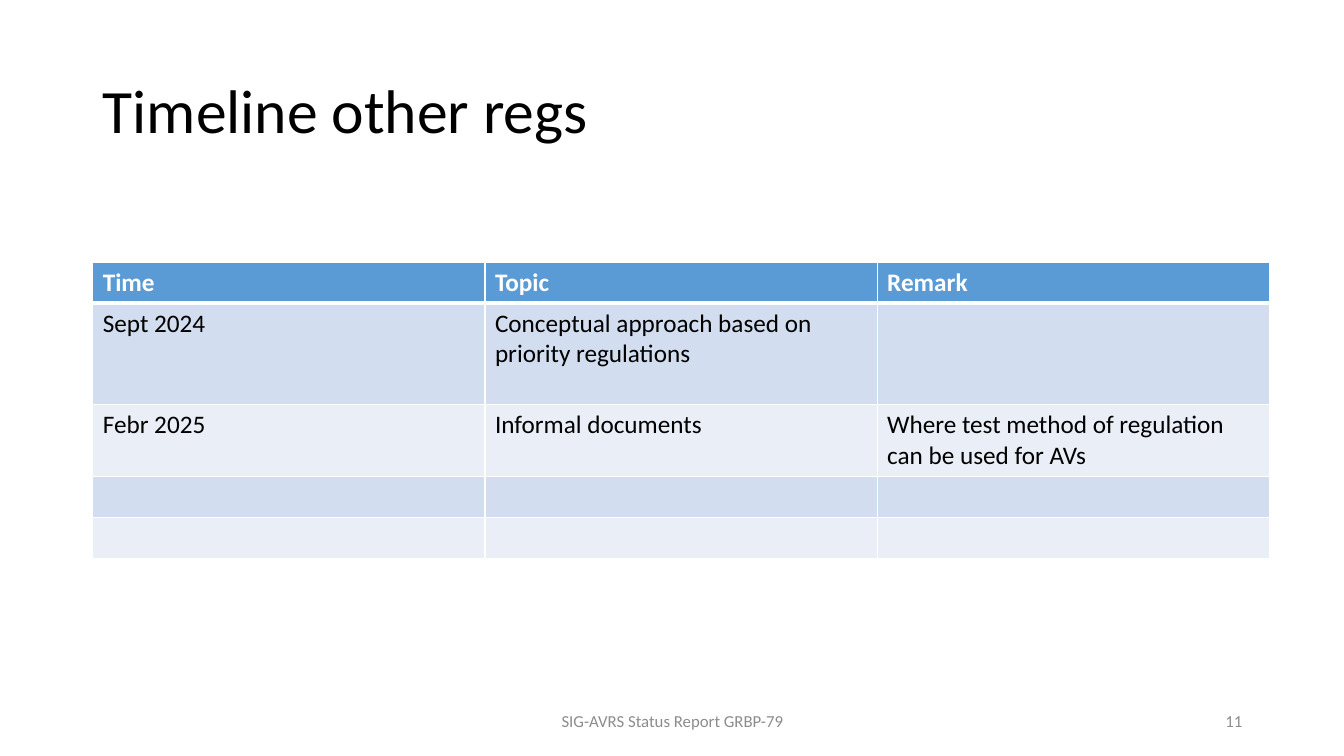
import pptx
import pptx.util
import pptx.oxml
import pptx.oxml.ns
import pptx.dml.color
import pptx.enum.text
from dataclasses import dataclass


@dataclass(frozen=True)
class Theme:
    font: str = "Calibri"
    title_size: int = 44
    table_size: int = 18
    footer_size: int = 12
    ink: str = "000000"
    paper: str = "FFFFFF"
    footer: str = "8C8C8C"
    header: str = "5B9BD5"
    bands: tuple = ("D2DEEF", "EAEFF7")


theme = Theme()
inches = pptx.util.Inches
align = pptx.enum.text.PP_ALIGN
middle = pptx.enum.text.MSO_ANCHOR.MIDDLE
rgb = pptx.dml.color.RGBColor.from_string

MARGIN = 0.92
COLUMN_WIDTH = 3.89
ROW_HEIGHTS = (0.4, 1.01, 0.71, 0.4, 0.4)
timeline = (
    ("Time", "Topic", "Remark"),
    ("Sept 2024", "Conceptual approach based on priority regulations", ""),
    ("Febr 2025", "Informal documents",
     "Where test method of regulation can be used for AVs"),
    ("", "", ""),
    ("", "", ""),
)


def write(para, text, size, color, bold=False):
    para.font.size = pptx.util.Pt(size)
    if text:
        span = para.add_run()
        span.text = text
        span.font.name = theme.font
        span.font.size = pptx.util.Pt(size)
        span.font.bold = bold
        span.font.color.rgb = rgb(color)


def draw_borders(cell, bottom_width):
    """Give the cell 1 pt side and top borders and its own bottom border."""
    properties = cell._tc.get_or_add_tcPr()
    widths = {"L": 1, "R": 1, "T": 1, "B": bottom_width}
    for index, (side, width) in enumerate(widths.items()):
        properties.insert(index, pptx.oxml.parse_xml(
            f'<a:ln{side} {pptx.oxml.ns.nsdecls("a")} w="{pptx.util.Pt(width)}">'
            f'<a:solidFill><a:srgbClr val="{theme.paper}"/></a:solidFill></a:ln{side}>'))


deck = pptx.Presentation()
deck.slide_width, deck.slide_height = inches(13.33), inches(7.5)
page = deck.slides.add_slide(deck.slide_layouts.get_by_name("Title Only"))

# Title
title = page.shapes.title
title.left, title.top = inches(MARGIN), inches(0.4)
title.width, title.height = inches(11.5), inches(1.45)
title.text_frame.vertical_anchor = middle
para = title.text_frame.paragraphs[0]
para.alignment = align.LEFT
para.line_spacing = 0.9
write(para, "Timeline other regs", theme.title_size, theme.ink)

# Timeline table
column_count = len(timeline[0])
table = page.shapes.add_table(
    len(timeline), column_count, inches(MARGIN), inches(2.6),
    inches(COLUMN_WIDTH * column_count), inches(sum(ROW_HEIGHTS))).table
for column in table.columns:
    column.width = inches(COLUMN_WIDTH)
for row_index, texts in enumerate(timeline):
    table.rows[row_index].height = inches(ROW_HEIGHTS[row_index])
    is_header = row_index == 0
    fill = theme.header if is_header else theme.bands[(row_index - 1) % 2]
    for column_index, text in enumerate(texts):
        cell = table.cell(row_index, column_index)
        cell.fill.solid()
        cell.fill.fore_color.rgb = rgb(fill)
        draw_borders(cell, 3 if is_header else 1)
        write(cell.text_frame.paragraphs[0], text, theme.table_size,
              theme.paper if is_header else theme.ink, is_header)

# Footer and page number
for left, width, alignment, text in (
        (4.42, 4.5, align.CENTER, "SIG-AVRS Status Report GRBP-79"),
        (9.42, 3, align.RIGHT, "11")):
    box = page.shapes.add_textbox(inches(left), inches(6.95), inches(width), inches(0.4))
    box.text_frame.word_wrap = True
    box.text_frame.vertical_anchor = middle
    para = box.text_frame.paragraphs[0]
    para.alignment = alignment
    write(para, text, theme.footer_size, theme.footer)

deck.save("out.pptx")
